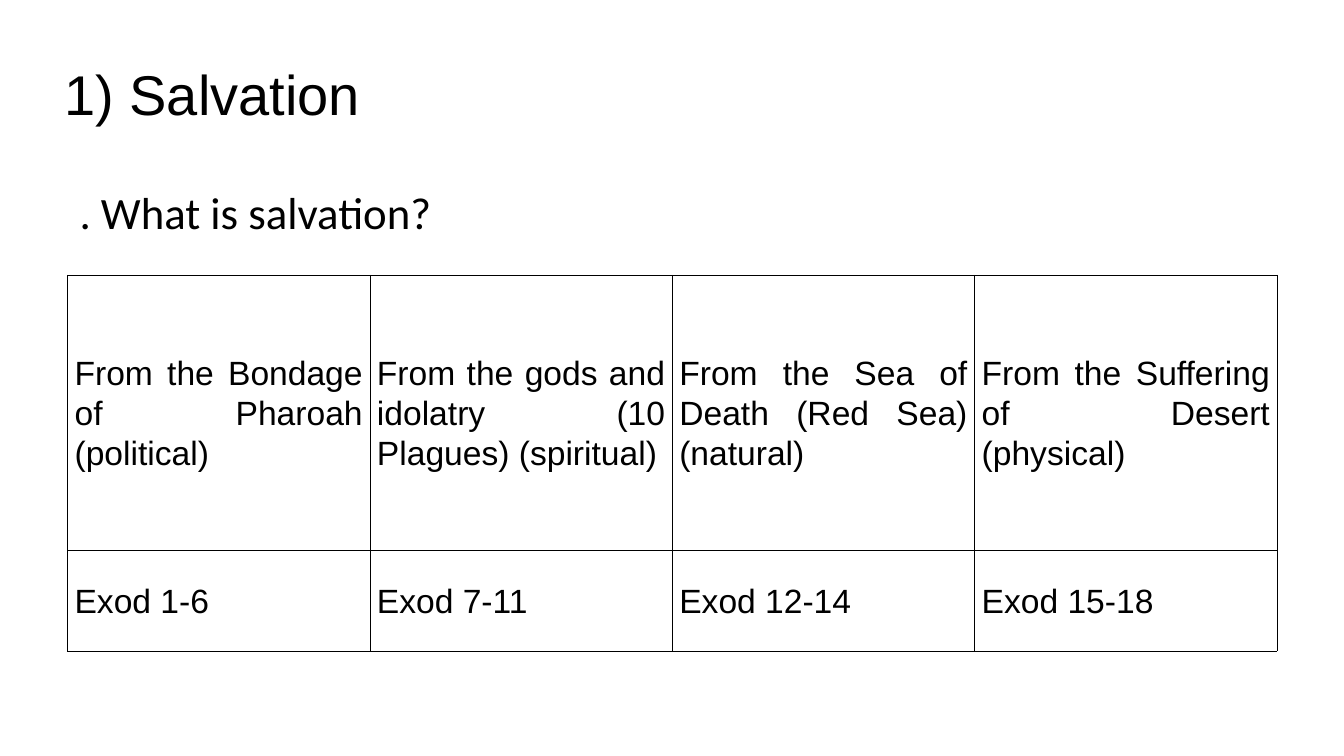
import pptx
import pptx.util
import pptx.dml.color
import pptx.enum.text
import pptx.oxml
import pptx.oxml.ns

Cm = pptx.util.Cm
Pt = pptx.util.Pt
Align = pptx.enum.text.PP_ALIGN
Mid = pptx.enum.text.MSO_ANCHOR.MIDDLE

HEAD = "1) Salvation "
ASK = ". What is salvation?"
ROWS = [
    [
        "From the Bondage of Pharoah (political)",
        "From the gods and idolatry (10 Plagues) (spiritual)",
        "From the Sea of Death (Red Sea) (natural)",
        "From the Suffering of Desert (physical)",
    ],
    ["Exod 1-6", "Exod 7-11", "Exod 12-14", "Exod 15-18"],
]
HUES = {"ink": "000000", "page": "FFFFFF"}
HIGHS = [6.93, 2.54]
WIDE = 30.48
EDGE = 0.28
BOXES = {
    "head": (-0.66, 0.76, 12.4, 3.18),
    "ask": (1.75, 4.52, WIDE, 12.57),
    "grid": (1.7, 6.93, WIDE, sum(HIGHS)),
}
FONTS = {
    "head": {"name": "Arial", "size": Pt(40), "bold": False},
    "ask": {"name": "Calibri", "size": Pt(32), "bold": False},
    "grid": {"name": "Arial", "size": Pt(24), "bold": False},
}
PARAS = {
    "head": {"alignment": Align.CENTER},
    "ask": {"alignment": Align.LEFT},
    "grid": {"alignment": Align.JUSTIFY, "line_spacing": 1.07, "space_after": Pt(8)},
}
CELL = {
    "vertical_anchor": Mid,
    "margin_left": Cm(0.18),
    "margin_right": Cm(0.18),
    "margin_top": Cm(0.05),
    "margin_bottom": Cm(0.05),
}


def put(thing, vals):
    for key, val in vals.items():
        setattr(thing, key, val)


def write(frame, text, kind):
    para = frame.paragraphs[0]
    put(para, PARAS[kind])
    run = para.add_run()
    run.text = text
    put(run.font, FONTS[kind])
    run.font.color.rgb = pptx.dml.color.RGBColor.from_string(HUES["ink"])
    return para


def place(shape, kind):
    sides = ("left", "top", "width", "height")
    put(shape, dict(zip(sides, map(Cm, BOXES[kind]))))


def rule(cell):
    props = cell._tc.get_or_add_tcPr()
    for spot, side in enumerate(("lnL", "lnR", "lnT", "lnB")):
        line = pptx.oxml.parse_xml(
            f'<a:{side} {pptx.oxml.ns.nsdecls("a")} w="{Pt(EDGE)}">'
            f'<a:solidFill><a:srgbClr val="{HUES["ink"]}"/></a:solidFill></a:{side}>'
        )
        props.insert(spot, line)


def main():
    deck = pptx.Presentation()
    put(deck, {"slide_width": Cm(33.87), "slide_height": Cm(19.05)})
    slide = deck.slides.add_slide(deck.slide_layouts[1])
    back = slide.background.fill
    back.solid()
    back.fore_color.rgb = pptx.dml.color.RGBColor.from_string(HUES["page"])

    head, ask = slide.placeholders
    for shape, text, kind in ((head, HEAD, "head"), (ask, ASK, "ask")):
        place(shape, kind)
        shape.text_frame.auto_size = pptx.enum.text.MSO_AUTO_SIZE.NONE
        para = write(shape.text_frame, text, kind)
    head.text_frame.vertical_anchor = Mid
    props = para._p.get_or_add_pPr()
    put_none = pptx.oxml.parse_xml(f'<a:buNone {pptx.oxml.ns.nsdecls("a")}/>')
    props.append(put_none)
    for key in ("marL", "indent"):
        props.set(key, "0")

    count = len(ROWS[0])
    box = map(Cm, BOXES["grid"])
    grid = slide.shapes.add_table(len(ROWS), count, *box).table
    put(grid, {"first_row": False, "horz_banding": False})
    for col in grid.columns:
        col.width = Cm(WIDE / count)
    for row, high, texts in zip(grid.rows, HIGHS, ROWS):
        row.height = Cm(high)
        for cell, text in zip(row.cells, texts):
            put(cell, CELL)
            cell.fill.background()
            rule(cell)
            write(cell.text_frame, text, "grid")

    deck.save("out.pptx")


if __name__ == "__main__":
    main()
